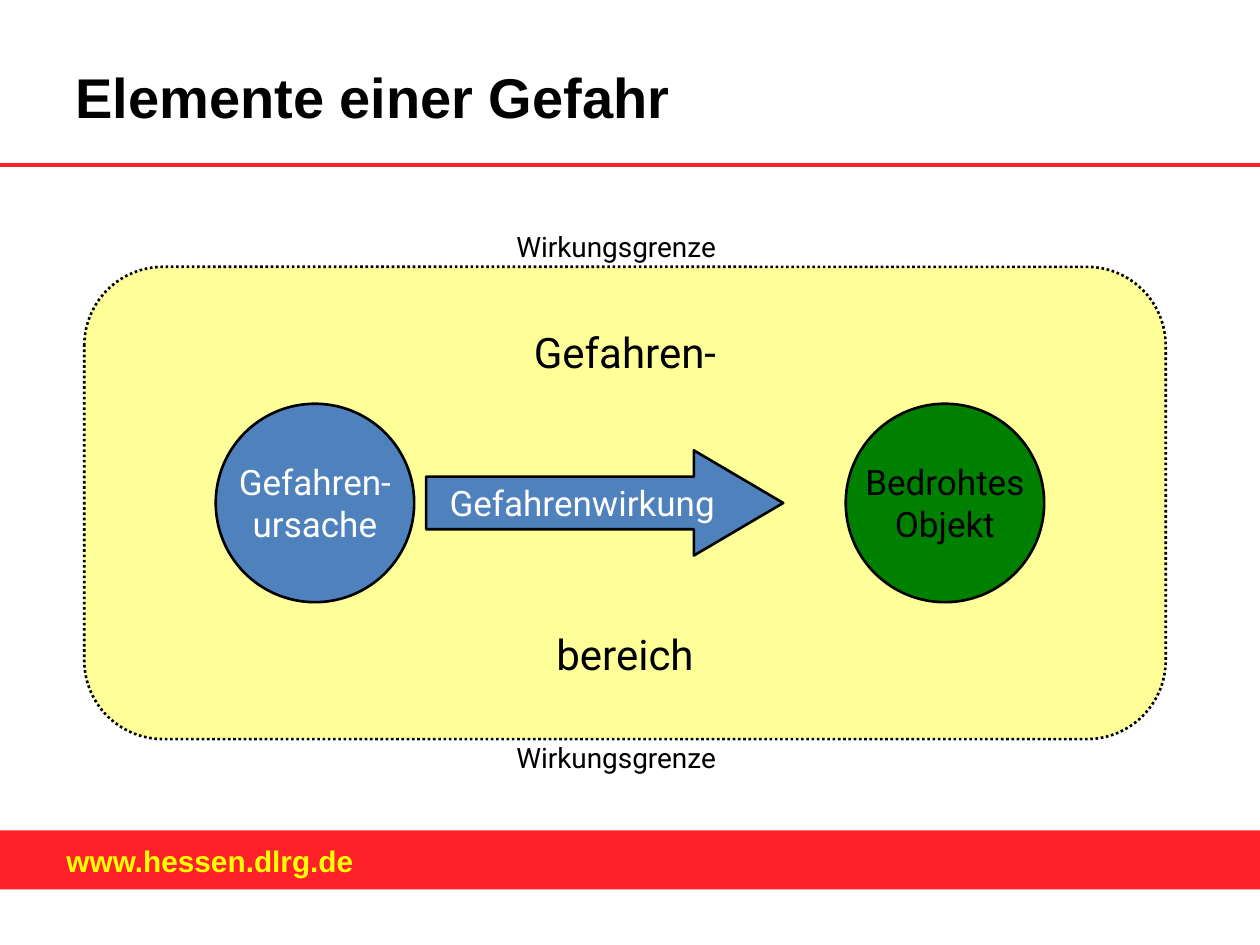
"""Build the slide "Elemente einer Gefahr" with its hazard zone diagram."""
from dataclasses import dataclass

from lxml import etree
from pptx import Presentation
from pptx import util as u
from pptx.dml.color import RGBColor
from pptx.enum import dml, shapes, text
from pptx.oxml.ns import qn


@dataclass(frozen=True)
class Theme:
    red: str = "FF2129"
    yellow: str = "FFFF00"
    zone: str = "FFFF99"
    blue: str = "4F81BD"
    green: str = "008000"
    black: str = "000000"
    white: str = "FFFFFF"
    heading_font: str = "Arial"
    body_font: str = "Roboto"
    title: int = 32
    zone_text: int = 24
    element: int = 20
    border_label: int = 16
    footer: int = 17
    outline: float = 1.5
    rule: float = 2.13


theme = Theme()


def write(shape, lines, size, color, font=theme.body_font, bold=False, gap=0,
          **frame_format):
    frame = shape.text_frame
    for name, value in frame_format.items():
        setattr(frame, name, value)
    for index, line in enumerate(lines):
        paragraph = frame.add_paragraph() if index else frame.paragraphs[0]
        paragraph.text = line
        if index:
            paragraph.space_before = u.Pt(gap)
        if shape.shape_type == shapes.MSO_SHAPE_TYPE.AUTO_SHAPE:
            paragraph.alignment = text.PP_ALIGN.CENTER
        for run in paragraph.runs:
            run_format = {"name": font, "size": u.Pt(size), "bold": bold}
            for name, value in run_format.items():
                setattr(run.font, name, value)
            run.font.color.rgb = RGBColor.from_string(color)


def add_filled(kind, box, fill, outlined=True):
    shape = slide.shapes.add_shape(kind, *map(u.Cm, box))
    shape.shadow.inherit = False
    shape.fill.solid()
    shape.fill.fore_color.rgb = RGBColor.from_string(fill)
    if outlined:
        shape.line.color.rgb = RGBColor.from_string(theme.black)
        shape.line.width = u.Pt(theme.outline)
    else:
        shape.line.fill.background()
    return shape


presentation = Presentation()
presentation.slide_width = u.Cm(25.4)
presentation.slide_height = u.Cm(19.05)
slide = presentation.slides.add_slide(presentation.slide_layouts[6])

add_filled(shapes.MSO_SHAPE.RECTANGLE, (0, 16.74, 25.4, 1.19), theme.red, outlined=False)
footer = slide.shapes.add_textbox(u.Cm(0.99), u.Cm(16.79), u.Cm(6.53), u.Cm(1.12))
write(footer, ["www.hessen.dlrg.de"], theme.footer, theme.yellow, theme.heading_font,
      bold=True, word_wrap=True, margin_left=u.Cm(0.35), margin_right=u.Cm(0.35),
      margin_top=u.Cm(0.2), margin_bottom=u.Cm(0.2))

rule = slide.shapes.add_connector(
    shapes.MSO_CONNECTOR.STRAIGHT, 0, u.Cm(3.33), presentation.slide_width, u.Cm(3.33))
rule.line.color.rgb = RGBColor.from_string(theme.red)
rule.line.width = u.Pt(theme.rule)
etree.SubElement(rule.element.spPr, qn("a:effectLst"))

centered = {"word_wrap": False, "vertical_anchor": text.MSO_ANCHOR.MIDDLE}

zone = add_filled(shapes.MSO_SHAPE.ROUNDED_RECTANGLE, (1.7, 5.38, 21.8, 9.52), theme.zone)
zone.line.dash_style = dml.MSO_LINE.ROUND_DOT
write(zone, ["Gefahren-", "bereich"], theme.zone_text, theme.black, gap=144, **centered)

circles = [
    (4.35, "Gefahren-\nursache", theme.blue, theme.white),
    (17.05, "Bedrohtes\nObjekt", theme.green, theme.black),
]
for left, label, fill, color in circles:
    circle = add_filled(shapes.MSO_SHAPE.OVAL, (left, 8.14, 4, 4), fill)
    write(circle, [label], theme.element, color, **centered)

arrow = add_filled(shapes.MSO_SHAPE.RIGHT_ARROW, (8.59, 9.08, 7.2, 2.12), theme.blue)
arrow.adjustments[1] = 0.85
write(arrow, ["Gefahrenwirkung"], theme.element, theme.white, **centered)

for top in (4.51, 14.8):
    border_label = slide.shapes.add_textbox(u.Cm(10.16), u.Cm(top), u.Cm(4.83), u.Cm(0.94))
    write(border_label, ["Wirkungsgrenze"], theme.border_label, theme.black,
          word_wrap=False, auto_size=text.MSO_AUTO_SIZE.SHAPE_TO_FIT_TEXT)

title = slide.shapes.add_textbox(u.Cm(1.27), u.Cm(0.53), u.Cm(22.86), u.Cm(2.8))
write(title, ["Elemente einer Gefahr"], theme.title, theme.black, theme.heading_font,
      bold=True, word_wrap=True, vertical_anchor=text.MSO_ANCHOR.MIDDLE)

presentation.save("out.pptx")
